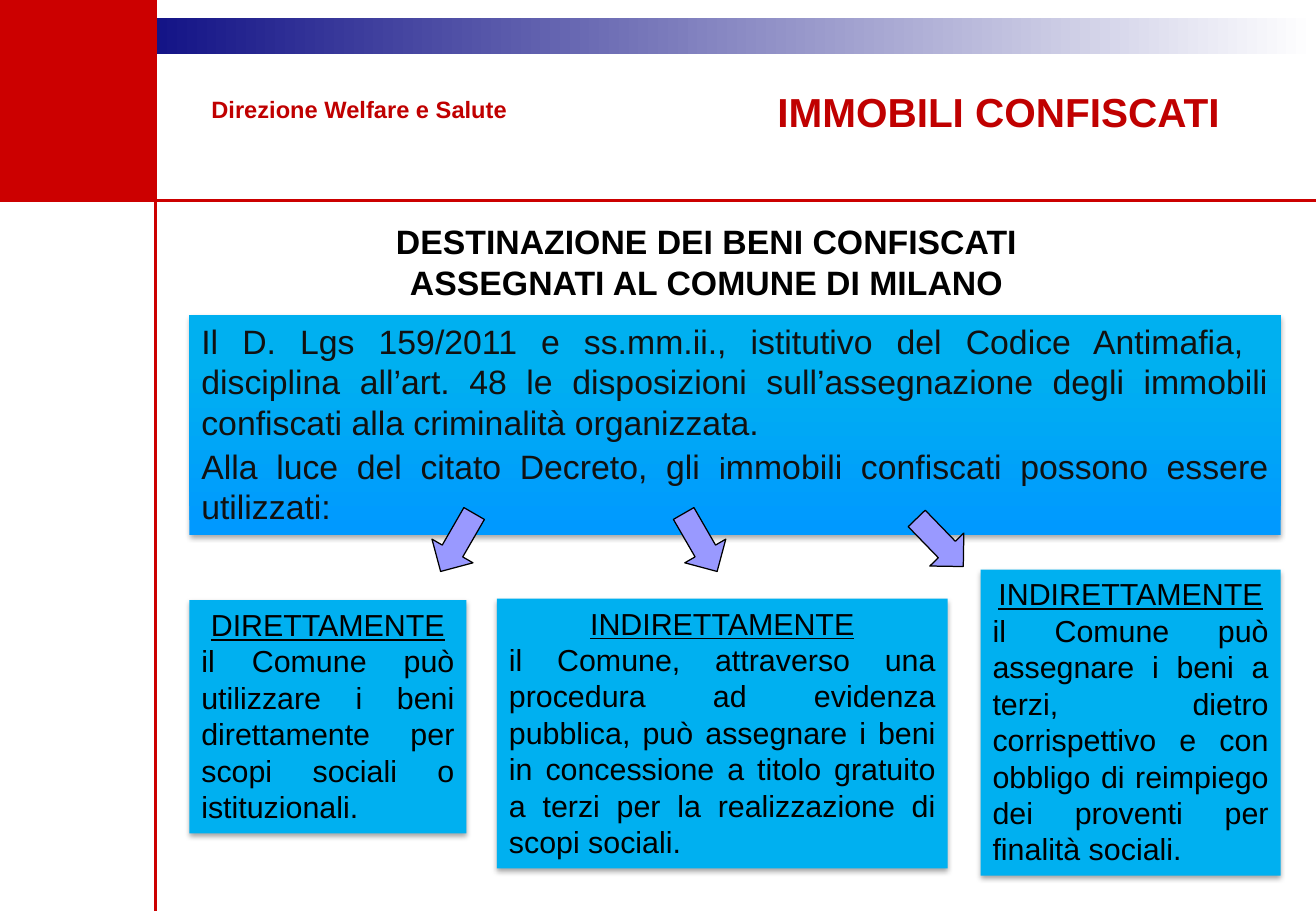
"""Build the slide on how confiscated properties are assigned in Milano."""
from lxml import etree
from pptx import Presentation
from pptx.dml.color import RGBColor
from pptx.enum.shapes import MSO_CONNECTOR, MSO_SHAPE
from pptx.enum.text import MSO_ANCHOR, PP_ALIGN
from pptx.oxml import parse_xml
from pptx.oxml.ns import nsdecls, qn
from pptx.util import Cm, Pt

WIDTH, HEIGHT = 27.51, 19.05
COLORS = {
    "red": "CC0000", "title": "C00000", "navy": "00007D", "white": "FFFFFF",
    "cyan": "00B0F0", "azure": "0099FF", "lilac": "9999FF",
    "black": "000000", "ink": "111111",
}
SHADOW = (
    f'<a:effectLst {nsdecls("a")}><a:outerShdw blurRad="40000" dist="23000" '
    'dir="5400000" rotWithShape="0"><a:srgbClr val="000000">'
    '<a:alpha val="35000"/></a:srgbClr></a:outerShdw></a:effectLst>'
)
OPTIONS = [
    ((3.96, 12.55, 5.79, 4.88), "DIRETTAMENTE",
     "il Comune può utilizzare i beni direttamente per scopi sociali o istituzionali."),
    ((10.39, 12.52, 9.42, 5.64), "INDIRETTAMENTE",
     "il Comune, attraverso una procedura ad evidenza pubblica, può assegnare i beni "
     "in concessione a titolo gratuito a terzi per la realizzazione di scopi sociali."),
    ((20.5, 11.91, 6.27, 6.4), "INDIRETTAMENTE",
     "il Comune può assegnare i beni a terzi, dietro corrispettivo e con obbligo di "
     "reimpiego dei proventi per finalità sociali."),
]
ARROWS = [(8.86, 120), (13.94, 60), (18.95, 45.9)]


def color(name):
    """Return the named colour."""
    return RGBColor.from_string(COLORS[name])


def add_block(page, box, fill, kind=MSO_SHAPE.RECTANGLE):
    """Add a filled shape without outline or shadow."""
    block = page.shapes.add_shape(kind, *map(Cm, box))
    block.shadow.inherit = False
    block.fill.solid()
    block.fill.fore_color.rgb = color(fill)
    block.line.fill.background()
    return block


def set_gradient(block, stops, angle):
    """Give a shape a two-stop linear gradient."""
    block.fill.gradient()
    block.fill.gradient_angle = angle
    for stop, (name, position) in zip(block.fill.gradient_stops, stops):
        stop.color.rgb = color(name)
        stop.position = position


def add_panel(page, box):
    """Add a cyan text panel with a soft shadow below."""
    panel = add_block(page, box, "cyan")
    properties = panel._element.spPr
    properties.replace(properties.find(qn("a:effectLst")), parse_xml(SHADOW))
    panel.text_frame.word_wrap = True
    panel.text_frame.vertical_anchor = MSO_ANCHOR.TOP
    return panel


def write(para, text, size, ink, align=PP_ALIGN.JUSTIFY, bold=False):
    """Fill a paragraph with evenly styled text."""
    para.text = text
    para.alignment = align
    para.font.name = "Arial"
    para.font.size = Pt(size)
    para.font.bold = bold
    para.font.color.rgb = color(ink)


def add_label(page, box, text, size, ink, align=PP_ALIGN.JUSTIFY):
    """Add a wrapping text box with one bold paragraph."""
    frame = page.shapes.add_textbox(*map(Cm, box)).text_frame
    frame.word_wrap = True
    write(frame.paragraphs[0], text, size, ink, align, bold=True)


def add_rule(page, start, end):
    """Add a thin red line."""
    rule = page.shapes.add_connector(MSO_CONNECTOR.STRAIGHT, *map(Cm, start + end))
    rule.line.color.rgb = color("red")
    rule.line.width = Pt(1.5)
    etree.SubElement(rule._element.spPr, qn("a:effectLst"))


def add_frame(page, box):
    """Draw the bar, the red corner and the two rules of the page frame."""
    left, top, width, height = box
    bar = add_block(page, (left + 1.24, top + 0.38, width - 1.24, 0.76), "navy")
    set_gradient(bar, [("navy", 0), ("white", 1)], 0)
    side, head = left + 3.25, top + 4.19
    add_block(page, (left, top, 3.25, 4.19), "red")
    add_rule(page, (left, head), (left + width, head))
    add_rule(page, (side, top + height), (side, top))


def add_header(page, box):
    """Place the office name, the title and the heading."""
    left, top, width, _ = box
    add_label(page, (left, top + 0.17, 7.37, 0.86), "Direzione Welfare e Salute",
              14, "title")
    add_label(page, (left + width - 9.8, top, 9.8, 1.3), "IMMOBILI CONFISCATI",
              24, "title")
    add_label(page, (left + 3.5, top + 2.8, 14.2, 1.96),
              "DESTINAZIONE DEI BENI CONFISCATI ASSEGNATI AL COMUNE DI MILANO",
              20, "black", PP_ALIGN.CENTER)


def add_intro(page, box):
    """Place the gradient panel that cites the law."""
    panel = add_panel(page, box)
    set_gradient(panel, [("azure", 0), ("cyan", 0.77)], 90)
    law = panel.text_frame.paragraphs[0]
    write(law, "Il D. Lgs 159/2011 e ss.mm.ii., istitutivo del Codice Antimafia,  "
          "disciplina all’art. 48 le disposizioni sull’assegnazione degli immobili "
          "confiscati alla criminalità organizzata.", 20, "ink")
    law.space_after = Pt(1)
    uses = panel.text_frame.add_paragraph()
    write(uses, "Alla luce del citato Decreto, gli ", 20, "ink")
    uses.space_before = uses.space_after = Pt(1)
    initial = uses.add_run()
    initial.text = "i"
    initial.font.size = Pt(18)
    uses.add_run().text = "mmobili confiscati possono essere utilizzati:"


def add_option(page, box, heading, text):
    """Place one way of using the properties."""
    frame = add_panel(page, box).text_frame
    write(frame.paragraphs[0], heading, 18, "black", PP_ALIGN.CENTER)
    frame.paragraphs[0].font.underline = True
    write(frame.add_paragraph(), text, 18, "black")


def add_arrow(page, box, angle):
    """Place a turned arrow that leads to an option."""
    arrow = add_block(page, box, "lilac", MSO_SHAPE.RIGHT_ARROW)
    arrow.rotation = angle
    arrow.line.color.rgb = color("black")
    arrow.line.width = Pt(0.75)


def main():
    """Build and save the deck."""
    deck = Presentation()
    deck.slide_width, deck.slide_height = Cm(WIDTH), Cm(HEIGHT)
    page = deck.slides.add_slide(deck.slide_layouts[6])
    add_frame(page, (0, 0, WIDTH, HEIGHT))
    add_header(page, (4.17, 1.7, 21.63, 4.76))
    add_intro(page, (3.96, 6.58, 22.81, 4.6))
    for box, heading, text in OPTIONS:
        add_option(page, box, heading, text)
    for left, angle in ARROWS:
        add_arrow(page, (left, 10.85, 1.4, 0.99), angle)
    deck.save("out.pptx")


if __name__ == "__main__":
    main()
